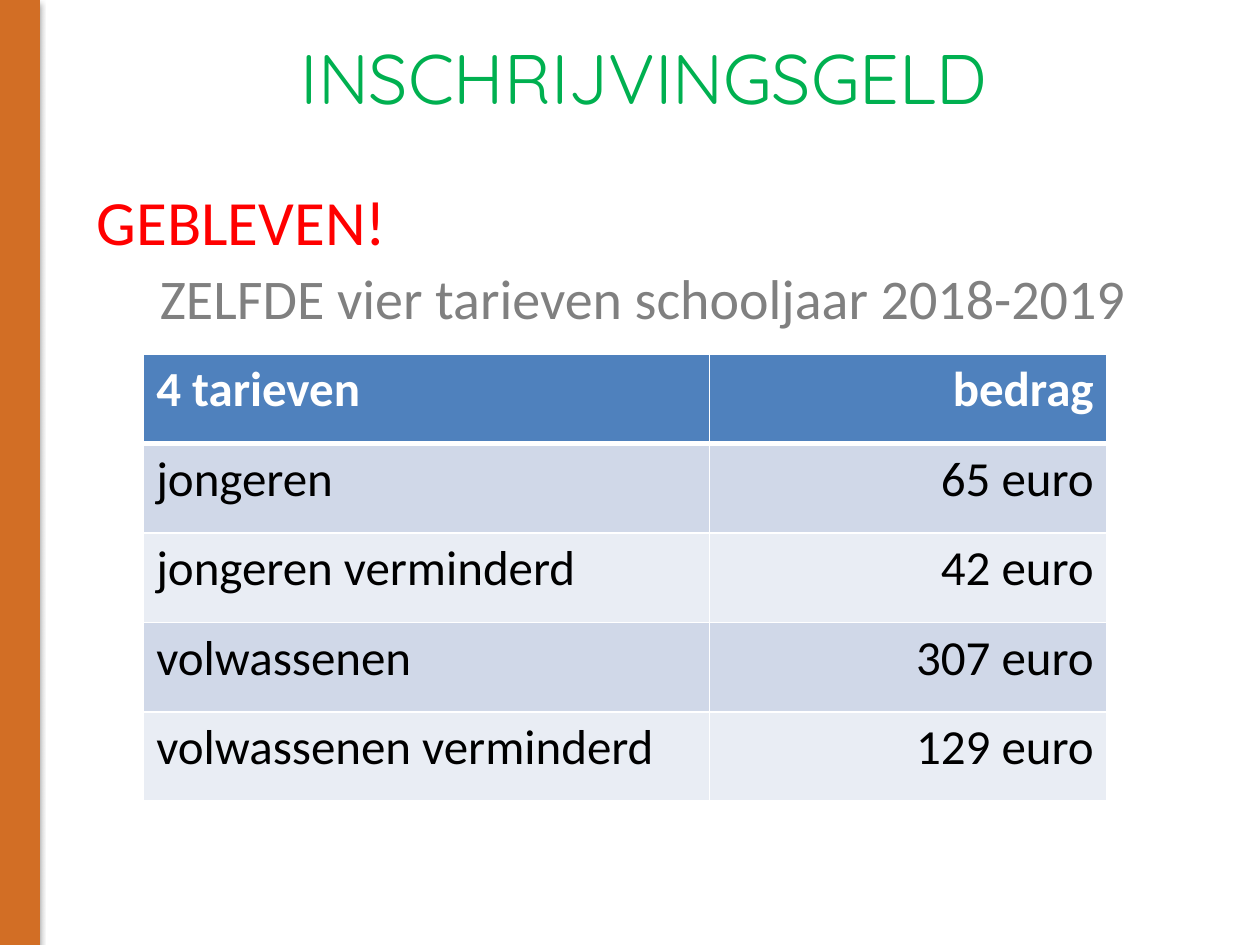
from typing import NamedTuple

import pptx
import pptx.dml.color
import pptx.enum.shapes
import pptx.enum.text
import pptx.oxml
import pptx.oxml.ns
import pptx.util

Inches = pptx.util.Inches
Pt = pptx.util.Pt
ALIGN = pptx.enum.text.PP_ALIGN
ANCHOR = pptx.enum.text.MSO_ANCHOR
NAMESPACE = pptx.oxml.ns.nsdecls("a")


class Style(NamedTuple):
    size: float
    color: str
    font: str = "Calibri"
    bold: bool = False


class Rate(NamedTuple):
    group: str
    amount: str


TITLE = Style(40, "00B050", "Quicksand")
HEADLINE = Style(36, "FF0000")
SUBLINE = Style(32, "808080")
HEADER = Style(28, "FFFFFF", bold=True)
ENTRY = Style(28, "000000")

HEADER_FILL = "4F81BD"
BAND_FILLS = ("D0D8E8", "E9EDF4")
RATES = [
    Rate("4 tarieven", " bedrag"),
    Rate("jongeren", "65 euro"),
    Rate("jongeren verminderd", "42 euro"),
    Rate("volwassenen", "307 euro"),
    Rate("volwassenen verminderd", "129 euro"),
]


def rgb(color: str) -> pptx.dml.color.RGBColor:
    return pptx.dml.color.RGBColor.from_string(color)


def add_span(para, text: str, style: Style) -> None:
    span = para.add_run()
    span.text = text
    span.font.name = style.font
    span.font.size = Pt(style.size)
    span.font.bold = style.bold
    span.font.color.rgb = rgb(style.color)


def add_box(slide, left: float, top: float, width: float, height: float, anchor):
    box = slide.shapes.add_textbox(
        Inches(left), Inches(top), Inches(width), Inches(height))
    frame = box.text_frame
    frame.word_wrap = True
    frame.vertical_anchor = anchor
    return frame


def add_side_bar(slide, width: float, height: float, color: str) -> None:
    bar = slide.shapes.add_shape(
        pptx.enum.shapes.MSO_SHAPE.RECTANGLE, 0, 0, Inches(width), Inches(height))
    bar.shadow.inherit = False
    bar.fill.solid()
    bar.fill.fore_color.rgb = rgb(color)
    bar.line.color.rgb = rgb(color)
    bar.line.width = Pt(0.75)
    # Soft shadow below the bar
    effects = bar.element.spPr.find(pptx.oxml.ns.qn("a:effectLst"))
    effects.append(pptx.oxml.parse_xml(
        f'<a:outerShdw {NAMESPACE} blurRad="{Pt(3.1)}" dist="{Pt(1.8)}" '
        'dir="5400000" rotWithShape="0"><a:srgbClr val="000000">'
        '<a:alpha val="35000"/></a:srgbClr></a:outerShdw>'))


def set_borders(cell, top: float, bottom: float) -> None:
    properties = cell._tc.get_or_add_tcPr()
    widths = {"lnL": 1, "lnR": 1, "lnT": top, "lnB": bottom}
    for position, (side, width) in enumerate(widths.items()):
        properties.insert(position, pptx.oxml.parse_xml(
            f'<a:{side} {NAMESPACE} w="{Pt(width)}"><a:solidFill>'
            f'<a:srgbClr val="FFFFFF"/></a:solidFill></a:{side}>'))


def add_rate_table(slide, left: float, top: float, widths: tuple[float, ...],
                   row_height: float, rates: list[Rate]) -> None:
    table = slide.shapes.add_table(
        len(rates), len(widths), Inches(left), Inches(top),
        Inches(sum(widths)), Inches(row_height * len(rates))).table
    for column, width in zip(table.columns, widths):
        column.width = Inches(width)
    for row, rate in enumerate(rates):
        table.rows[row].height = Inches(row_height)
        fill = BAND_FILLS[(row - 1) % 2] if row else HEADER_FILL
        for column, text in enumerate(rate):
            cell = table.cell(row, column)
            cell.fill.solid()
            cell.fill.fore_color.rgb = rgb(fill)
            set_borders(cell, top=3 if row == 1 else 1, bottom=1 if row else 3)
            para = cell.text_frame.paragraphs[0]
            para.alignment = ALIGN.RIGHT if column else ALIGN.LEFT
            add_span(para, text, ENTRY if row else HEADER)


def main() -> None:
    deck = pptx.Presentation()
    deck.slide_width, deck.slide_height = Inches(10), Inches(7.5)
    slide = deck.slides.add_slide(deck.slide_layouts[6])

    add_side_bar(slide, 0.31, 7.5, "D26E25")

    # Title
    para = add_box(slide, 0.98, 0.21, 8.11, 0.79, ANCHOR.MIDDLE).paragraphs[0]
    para.alignment = ALIGN.CENTER
    add_span(para, " INSCHRIJVINGSGELD", TITLE)

    # Announcement
    frame = add_box(slide, 0.67, 1.47, 8.9, 5.12, ANCHOR.TOP)
    frame.margin_bottom = 0
    headline, subline = frame.paragraphs[0], frame.add_paragraph()
    headline.line_spacing = subline.line_spacing = 0.9
    add_span(headline, "GEBLEVEN!", HEADLINE)
    subline.space_before = Pt(6.4)
    indents = subline._p.get_or_add_pPr()
    indents.set("marL", str(Inches(0.81)))
    indents.set("indent", str(Inches(-0.31)))
    add_span(subline, "ZELFDE vier tarieven schooljaar 2018-2019", SUBLINE)

    # Rates
    add_rate_table(slide, 1.14, 2.81, (4.49, 3.15), 0.71, RATES)

    deck.save("out.pptx")


if __name__ == "__main__":
    main()
